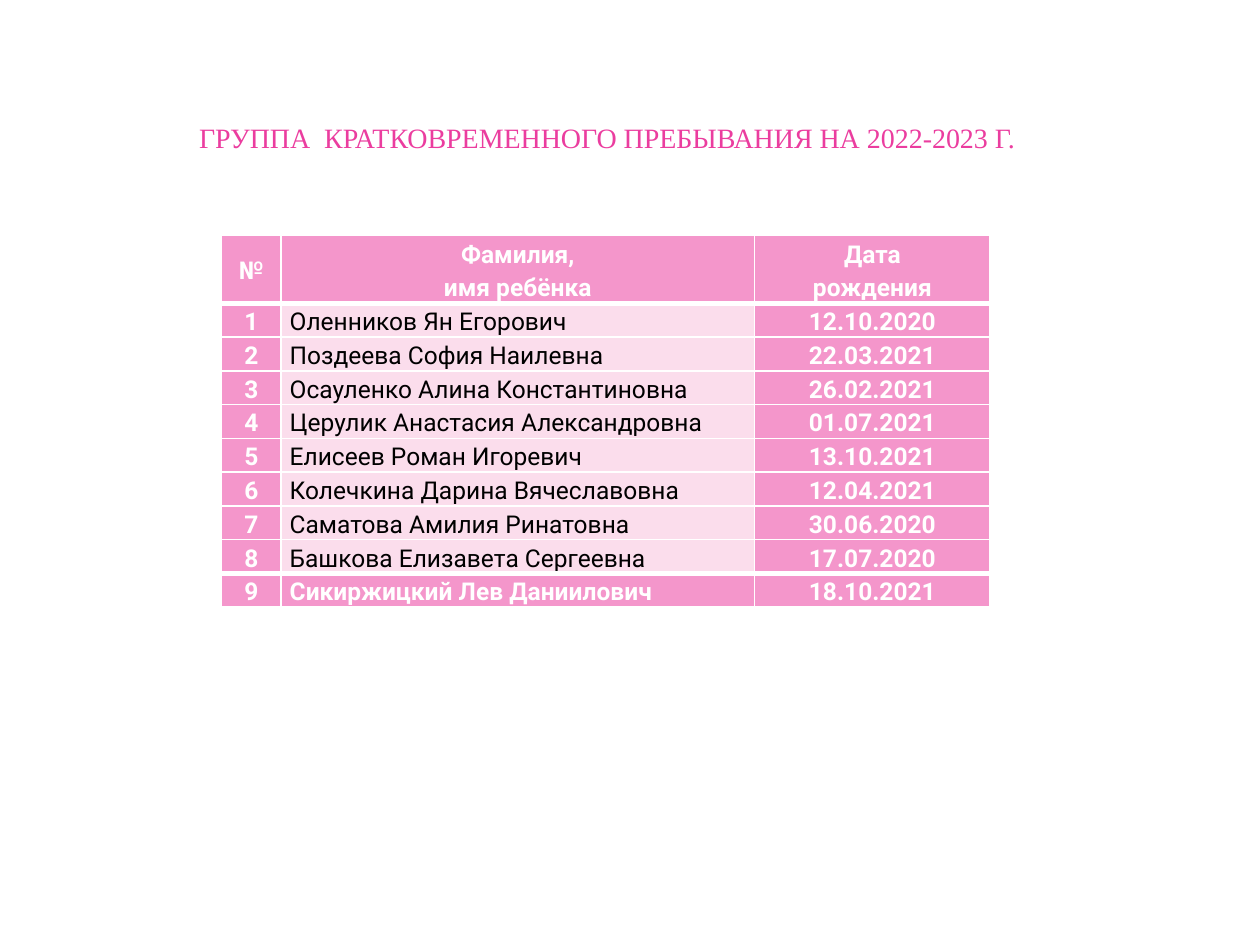
from dataclasses import dataclass
from typing import Any

from lxml.etree import SubElement
from pptx import Presentation
from pptx.dml.color import RGBColor
from pptx.enum.text import MSO_ANCHOR, MSO_AUTO_SIZE, PP_ALIGN
from pptx.oxml.ns import qn
from pptx.util import Inches, Pt

PINK = "F496CB"
PALE_PINK = "FBDDEC"
MAGENTA = "EB3D9F"
WHITE = "FFFFFF"
BLACK = "000000"
UNIT_HEIGHT = 2.95 / 11
COLUMN_WIDTHS = (0.47, 3.76, 1.87)
HEADINGS = ("№", "Фамилия,\nимя ребёнка", "Дата\nрождения")
CELL_FORMAT = {
    "margin_left": Inches(0.07),
    "margin_right": Inches(0.07),
    "margin_top": 0,
    "margin_bottom": 0,
    "vertical_anchor": MSO_ANCHOR.MIDDLE,
}


@dataclass(frozen=True)
class Child:
    name: str
    birth_date: str


@dataclass(frozen=True)
class CellLook:
    fill: str = PINK
    ink: str = WHITE
    bold: bool = True
    align: PP_ALIGN = PP_ALIGN.CENTER
    top: float = 1
    bottom: float = 1


CHILDREN = (
    Child("Оленников Ян Егорович", "12.10.2020"),
    Child("Поздеева София Наилевна", "22.03.2021"),
    Child("Осауленко Алина Константиновна", "26.02.2021"),
    Child("Церулик Анастасия Александровна", "01.07.2021"),
    Child("Елисеев Роман Игоревич", "13.10.2021"),
    Child("Колечкина Дарина Вячеславовна", "12.04.2021"),
    Child("Саматова Амилия Ринатовна", "30.06.2020"),
    Child("Башкова Елизавета Сергеевна", "17.07.2020"),
    Child("Сикиржицкий Лев Даниилович", "18.10.2021"),
)


def color(value: str) -> RGBColor:
    return RGBColor.from_string(value)


def apply_format(target: Any, values: dict[str, Any]) -> None:
    for attribute, value in values.items():
        setattr(target, attribute, value)


def format_paragraph(paragraph: Any, align: PP_ALIGN, spacing: float,
                     ink: str, font_values: dict[str, Any]) -> None:
    apply_format(paragraph, {"alignment": align, "line_spacing": spacing})
    for run in paragraph.runs:
        apply_format(run.font, font_values)
        run.font.color.rgb = color(ink)


def add_borders(cell: Any, top: float, bottom: float) -> None:
    properties = cell._tc.get_or_add_tcPr()
    for side, width in (("L", 1), ("R", 1), ("T", top), ("B", bottom)):
        border = SubElement(properties, qn(f"a:ln{side}"), w=str(Pt(width)))
        solid = SubElement(border, qn("a:solidFill"))
        SubElement(solid, qn("a:srgbClr"), val=WHITE)


def draw_cell(cell: Any, text: str, look: CellLook) -> None:
    add_borders(cell, look.top, look.bottom)
    apply_format(cell, CELL_FORMAT)
    cell.fill.solid()
    cell.fill.fore_color.rgb = color(look.fill)
    cell.text = text
    for paragraph in cell.text_frame.paragraphs:
        format_paragraph(paragraph, look.align, 1.15, look.ink,
                         {"name": "Roboto", "size": Pt(14), "bold": look.bold})


def cell_look(row: int, column: int) -> CellLook:
    last = len(CHILDREN)
    is_name = column == 1 and row > 0
    is_plain = is_name and row < last
    return CellLook(
        fill=PALE_PINK if is_plain else PINK,
        ink=BLACK if is_plain else WHITE,
        bold=not is_plain,
        align=PP_ALIGN.LEFT if is_name else PP_ALIGN.CENTER,
        top=3 if row in (1, last) else 1,
        bottom=3 if row in (0, last - 1) else 1,
    )


def draw_title(slide: Any) -> None:
    title = slide.shapes.title
    apply_format(title, {"left": Inches(1.36), "top": Inches(0.64),
                         "width": Inches(6.92), "height": Inches(0.64)})
    frame = title.text_frame
    frame.text = "ГРУППА  КРАТКОВРЕМЕННОГО ПРЕБЫВАНИЯ НА 2022-2023 Г."
    apply_format(frame, {"word_wrap": True, "auto_size": MSO_AUTO_SIZE.NONE,
                         "vertical_anchor": MSO_ANCHOR.TOP})
    format_paragraph(frame.paragraphs[0], PP_ALIGN.CENTER, 2.0, MAGENTA,
                     {"name": "Times New Roman", "size": Pt(16), "bold": False})


def draw_roster(slide: Any) -> None:
    records = [HEADINGS] + [(str(number), child.name, child.birth_date)
                            for number, child in enumerate(CHILDREN, 1)]
    roster = slide.shapes.add_table(
        len(records), len(COLUMN_WIDTHS), Inches(1.76), Inches(1.87),
        Inches(sum(COLUMN_WIDTHS)), Inches(2.95)).table
    apply_format(roster, {"first_row": False, "horz_banding": False})
    for column, width in zip(roster.columns, COLUMN_WIDTHS):
        column.width = Inches(width)
    for row, record in enumerate(records):
        roster.rows[row].height = Inches(UNIT_HEIGHT * (1 if row else 2))
        for column, text in enumerate(record):
            draw_cell(roster.cell(row, column), text, cell_look(row, column))


def main() -> None:
    deck = Presentation()
    apply_format(deck, {"slide_width": Inches(10), "slide_height": Inches(7.5)})
    slide = deck.slides.add_slide(deck.slide_layouts[5])
    draw_title(slide)
    draw_roster(slide)
    deck.save("out.pptx")


if __name__ == "__main__":
    main()
